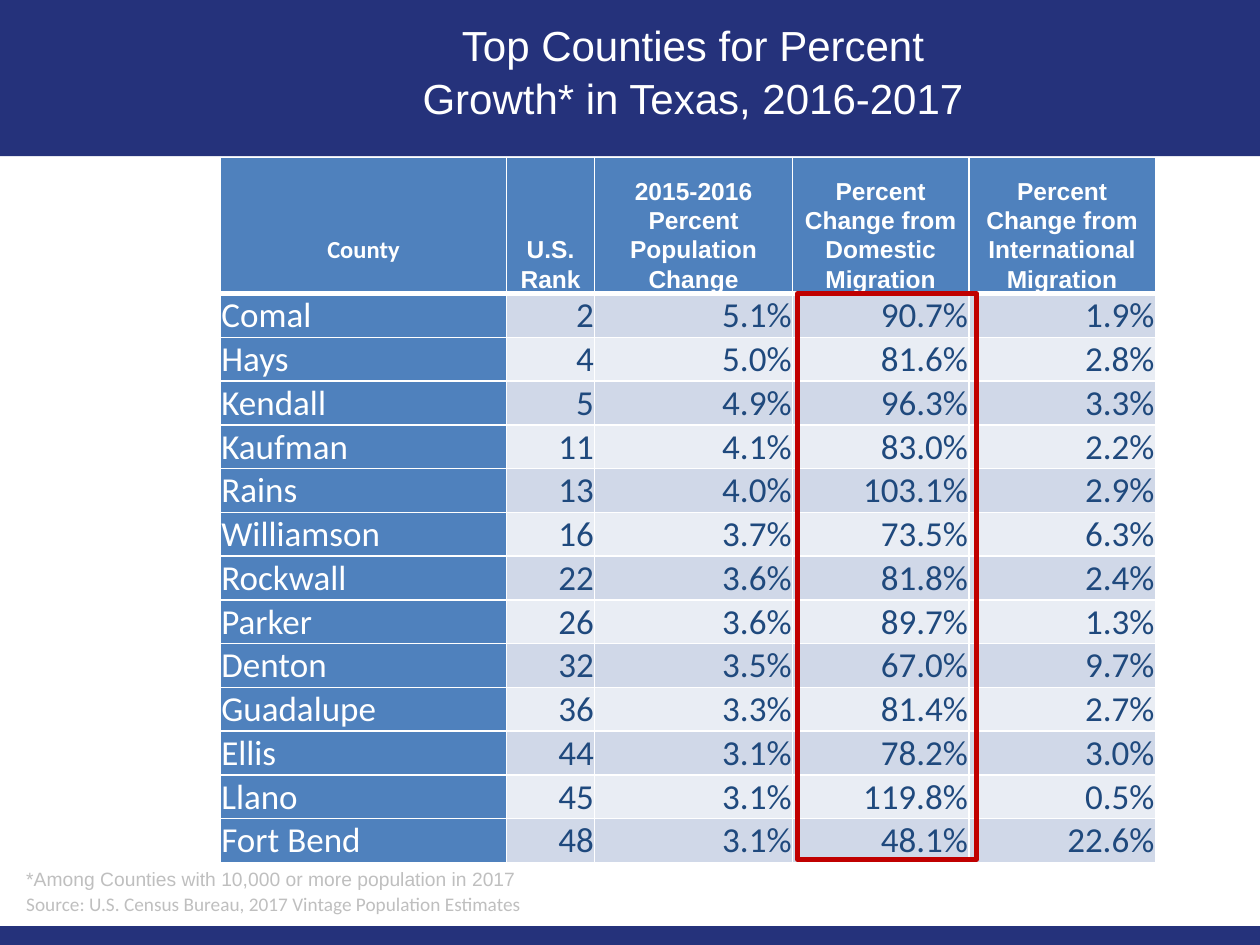
"""Build the slide on the fastest growing Texas counties."""
from lxml.etree import SubElement
from pptx import Presentation
from pptx.dml.color import RGBColor
from pptx.enum.shapes import MSO_SHAPE
from pptx.enum.text import MSO_ANCHOR, MSO_AUTO_SIZE, PP_ALIGN
from pptx.oxml.ns import qn
from pptx.util import Inches, Pt

HUES = {"navy": "25327B", "blue": "4F81BD", "ink": "1F497D", "odd": "D0D8E8",
        "even": "E9EDF4", "white": "FFFFFF", "red": "C00000", "gray": "BFBFBF"}
HEADS = ["County", "U.S. Rank", "2015-2016 Percent Population Change",
         "Percent Change from Domestic Migration",
         "Percent Change from International\nMigration"]
ROWS = [
    ("Comal", "2", "5.1%", "90.7%", "1.9%"),
    ("Hays", "4", "5.0%", "81.6%", "2.8%"),
    ("Kendall", "5", "4.9%", "96.3%", "3.3%"),
    ("Kaufman", "11", "4.1%", "83.0%", "2.2%"),
    ("Rains", "13", "4.0%", "103.1%", "2.9%"),
    ("Williamson", "16", "3.7%", "73.5%", "6.3%"),
    ("Rockwall", "22", "3.6%", "81.8%", "2.4%"),
    ("Parker", "26", "3.6%", "89.7%", "1.3%"),
    ("Denton", "32", "3.5%", "67.0%", "9.7%"),
    ("Guadalupe", "36", "3.3%", "81.4%", "2.7%"),
    ("Ellis", "44", "3.1%", "78.2%", "3.0%"),
    ("Llano", "45", "3.1%", "119.8%", "0.5%"),
    ("Fort Bend", "48", "3.1%", "48.1%", "22.6%"),
]
COLS = [22.7, 7, 15.7, 14, 14.8]
HEAD = 14.4
TALL = 74

deck = Presentation()
deck.slide_width, deck.slide_height = Inches(10), Inches(7.5)
slide = deck.slides.add_slide(deck.slide_layouts[5])
shapes = slide.shapes


def span(left, top, width, height):
    """Turn percentages of the slide into lengths."""
    wide, high = deck.slide_width / 100, deck.slide_height / 100
    return [int(n) for n in (left * wide, top * high, width * wide, height * high)]


def style(para, size, face, hue, align=PP_ALIGN.LEFT, lead=1.0, bold=False):
    """Format a paragraph and its runs."""
    para.alignment = align
    para.line_spacing = lead
    for run in para.runs:
        font = run.font
        font.size, font.name, font.bold = Pt(size), face, bold
        font.color.rgb = RGBColor.from_string(HUES[hue])


for top, height in ((0, 16.53), (98, 2)):
    band = shapes.add_shape(MSO_SHAPE.RECTANGLE, *span(0, top, 100, height))
    band.shadow.inherit = False
    band.fill.solid()
    band.fill.fore_color.rgb = RGBColor.from_string(HUES["navy"])
    band.line.fill.background()

title = shapes.title
shapes._spTree.append(title._element)
title.left, title.top, title.width, title.height = span(30, 1.07, 50, 12.13)
frame = title.text_frame
frame.text = "Top Counties for Percent Growth* in Texas, 2016-2017"
frame.word_wrap = True
frame.auto_size = MSO_AUTO_SIZE.NONE
frame.vertical_anchor = MSO_ANCHOR.TOP
style(frame.paragraphs[0], 24, "Arial", "white", PP_ALIGN.CENTER, 1.06)

grid = shapes.add_table(len(ROWS) + 1, len(COLS),
                        *span(17.5, 16.67, sum(COLS), TALL)).table
for col, width in zip(grid.columns, COLS):
    col.width = span(0, 0, width, 0)[2]
for i, row in enumerate(grid.rows):
    row.height = span(0, 0, 0, HEAD if i == 0 else (TALL - HEAD) / len(ROWS))[3]

for i, texts in enumerate([HEADS] + ROWS):
    for j, text in enumerate(texts):
        cell = grid.cell(i, j)
        cell.text_frame.text = text
        cell.vertical_anchor = MSO_ANCHOR.BOTTOM
        cell.margin_left = cell.margin_right = Inches(0.07) if i == 0 else Pt(0.5)
        cell.margin_top = 0 if i == 0 else Pt(0.5)
        cell.margin_bottom = Inches(0.23) if i == j == 0 else 0
        for para in cell.text_frame.paragraphs:
            if i == 0:
                face = "Arial" if j else "Calibri"
                style(para, 14, face, "white", PP_ALIGN.CENTER, 1.07, True)
            elif j == 0:
                style(para, 20, "Calibri", "white")
            else:
                style(para, 20, "Calibri", "ink", PP_ALIGN.RIGHT)
        props = cell._tc.get_or_add_tcPr()
        for side in ("L", "R", "T", "B"):
            thick = (i, side) in ((0, "B"), (1, "T"))
            edge = SubElement(props, qn("a:ln" + side), w=str(Pt(3 if thick else 1)))
            paint = SubElement(edge, qn("a:solidFill"))
            SubElement(paint, qn("a:srgbClr"), val=HUES["white"])
        cell.fill.solid()
        hue = "blue" if i == 0 or j == 0 else "odd" if i % 2 else "even"
        cell.fill.fore_color.rgb = RGBColor.from_string(HUES[hue])

notes = shapes.add_textbox(*span(1.1, 90.93, 50, 9.33)).text_frame
notes.word_wrap = True
notes.text = ("*Among Counties with 10,000 or more population in 2017\n"
              "Source: U.S. Census Bureau, 2017 Vintage Population Estimates")
for para, face in zip(notes.paragraphs, ("Arial", "Calibri")):
    style(para, 11, face, "gray", lead=1.07)

mark = shapes.add_shape(MSO_SHAPE.RECTANGLE, *span(63.3, 31.07, 14.2, 59.87))
mark.shadow.inherit = False
mark.fill.background()
mark.line.color.rgb = RGBColor.from_string(HUES["red"])
mark.line.width = Pt(2.75)

deck.save("out.pptx")
